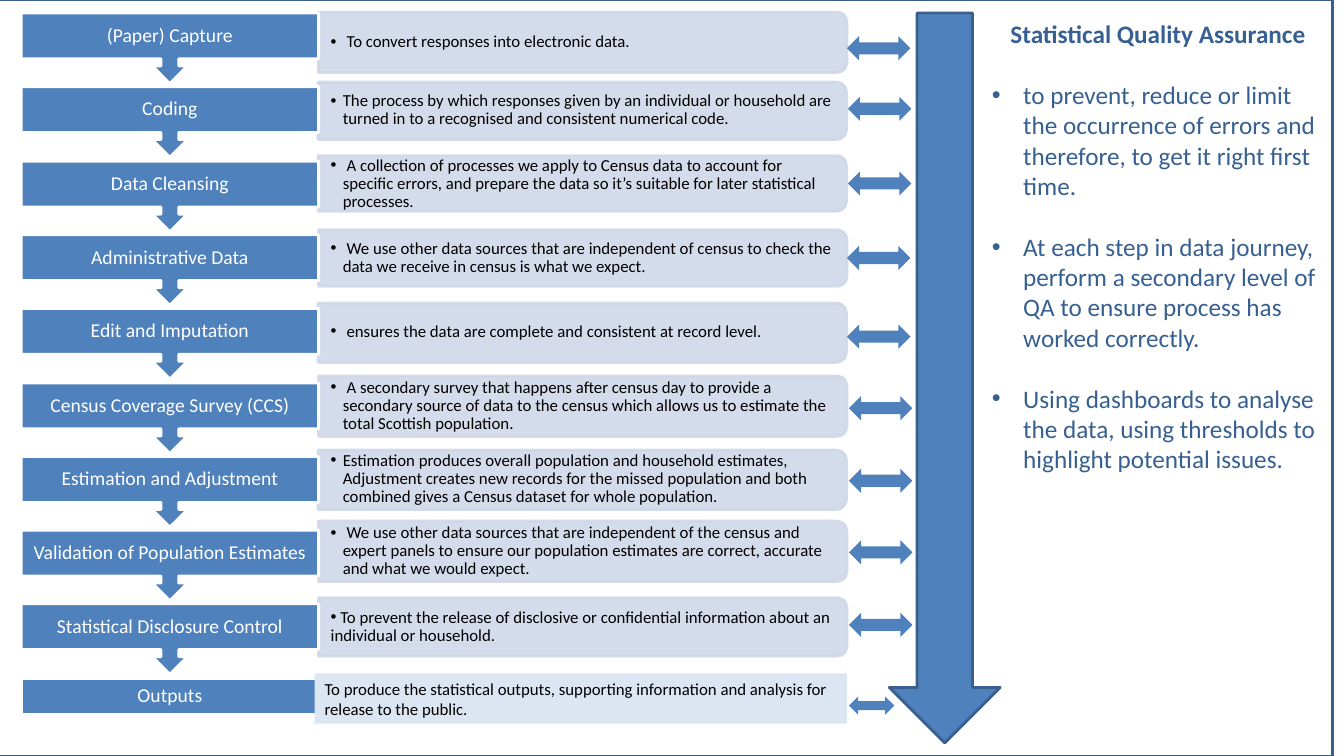
from dataclasses import dataclass

from lxml.etree import SubElement
from pptx import Presentation
from pptx.dml.color import RGBColor
from pptx.enum.shapes import MSO_SHAPE
from pptx.enum.text import MSO_ANCHOR, MSO_AUTO_SIZE, PP_ALIGN
from pptx.oxml.ns import qn
from pptx.util import Emu, Pt

EMU_PER_PX = 9144  # 100 px to the inch


@dataclass(frozen=True)
class Theme:
    font: str = "Calibri"
    blue: str = "4F81BD"
    edge: str = "3A5F8C"
    heading: str = "376092"
    panel: str = "D0D8E8"
    pale: str = "DCE6F2"
    white: str = "FFFFFF"
    black: str = "000000"
    heading_size: int = 18
    step_size: int = 14
    detail_size: int = 12
    line_width: int = 2


@dataclass(frozen=True)
class Box:
    left: int
    top: int
    width: int
    height: int


@dataclass(frozen=True)
class Step:
    name: str
    detail: str
    panel_top: int
    panel_height: int
    arrow_left: int
    arrow_top: int
    indent: int = 12


THEME = Theme()
STEP_LEFT, STEP_TOP, STEP_WIDTH, STEP_HEIGHT, STEP_PITCH = 21, 13, 295, 70, 73.3
PANEL_LEFT, PANEL_WIDTH = 316, 524

STEPS = [
    Step("(Paper) Capture", " To convert responses into electronic data.", 12, 60, 840, 36),
    Step("Coding", "The process by which responses given by an individual or household are "
         "turned in to a recognised and consistent numerical code.", 81, 57, 841, 96),
    Step("Data Cleansing", " A collection of processes we apply to Census data to account for "
         "specific errors, and prepare the data so it’s suitable for later statistical "
         "processes.", 155, 55, 841, 170),
    Step("Administrative Data", " We use other data sources that are independent of census to "
         "check the data we receive in census is what we expect.", 228, 56, 840, 244),
    Step("Edit and Imputation", " ensures the data are complete and consistent at record level.",
         300, 59, 840, 322),
    Step("Census Coverage Survey (CCS)", " A secondary survey that happens after census day to "
         "provide a secondary source of data to the census which allows us to estimate the "
         "total Scottish population.", 373, 60, 842, 393),
    Step("Estimation and Adjustment", "Estimation produces overall population and household "
         "estimates, Adjustment creates new records for the missed population and both "
         "combined gives a Census dataset for whole population.", 446, 59, 842, 465),
    Step("Validation of Population Estimates", " We use other data sources that are independent "
         "of the census and expert panels to ensure our population estimates are correct, "
         "accurate and what we would expect.", 517, 60, 842, 536),
    Step("Statistical Disclosure Control", " To prevent the release of disclosive or "
         "confidential information about an individual or household.", 593, 58, 842, 608, 0),
]

QUALITY_POINTS = [
    "to prevent, reduce or limit the occurrence of errors and therefore, to get it right first time.",
    "At each step in data journey, perform a secondary level of QA to ensure process has worked correctly.",
    "Using dashboards to analyse the data, using thresholds to highlight potential issues.",
]


def px(length: float) -> Emu:
    return Emu(round(length * EMU_PER_PX))


def place(box: Box) -> tuple:
    return px(box.left), px(box.top), px(box.width), px(box.height)


def add_shape(slide, kind, box: Box, fill: str = "", line: str = ""):
    shape = slide.shapes.add_shape(kind, *place(box))
    shape.shadow.inherit = False
    if fill:
        shape.fill.solid()
        shape.fill.fore_color.rgb = RGBColor.from_string(fill)
    else:
        shape.fill.background()
    if line:
        shape.line.color.rgb = RGBColor.from_string(line)
        shape.line.width = Pt(THEME.line_width)
    else:
        shape.line.fill.background()
    return shape


def set_frame(frame, anchor, horizontal: int = 10, vertical: int = 5) -> None:
    frame.word_wrap = True
    frame.auto_size = MSO_AUTO_SIZE.NONE
    frame.vertical_anchor = anchor
    frame.margin_left = frame.margin_right = px(horizontal)
    frame.margin_top = frame.margin_bottom = px(vertical)


def add_bullet(paragraph, indent: int) -> None:
    properties = paragraph._p.get_or_add_pPr()
    properties.set("marL", str(px(indent)))
    properties.set("indent", str(px(-indent)))
    SubElement(properties, qn("a:buFont")).set("typeface", "Arial")
    SubElement(properties, qn("a:buChar")).set("char", "•")


def write(paragraph, text: str, size: int, color: str, align=PP_ALIGN.LEFT,
          spacing: float = 1.0, bold: bool = False) -> None:
    paragraph.alignment = align
    paragraph.line_spacing = spacing
    run = paragraph.add_run()
    run.text = text
    run.font.name = THEME.font
    run.font.size = Pt(size)
    run.font.bold = bold
    run.font.color.rgb = RGBColor.from_string(color)


def add_step_box(slide, kind, row: int, height: int, name: str) -> None:
    box = Box(STEP_LEFT, round(STEP_TOP + row * STEP_PITCH), STEP_WIDTH, height)
    shape = add_shape(slide, kind, box, THEME.blue, THEME.white)
    set_frame(shape.text_frame, MSO_ANCHOR.MIDDLE, 6, 3)
    write(shape.text_frame.paragraphs[0], name, THEME.step_size, THEME.white,
          PP_ALIGN.CENTER, 0.9)


def add_panel(slide, step: Step) -> None:
    # The shape is turned a quarter so that its rounded corners face right
    middle = step.panel_top + step.panel_height / 2
    upright = Box(PANEL_LEFT + (PANEL_WIDTH - step.panel_height) // 2,
                  round(middle - PANEL_WIDTH / 2), step.panel_height, PANEL_WIDTH)
    panel = add_shape(slide, MSO_SHAPE.ROUND_2_SAME_RECTANGLE, upright, THEME.panel, THEME.panel)
    panel.rotation = 90
    for fill in (panel.fill, panel.line.fill):
        color = fill._xPr.find(".//" + qn("a:srgbClr"))
        SubElement(color, qn("a:alpha")).set("val", "90000")

    text_box = slide.shapes.add_textbox(
        *place(Box(PANEL_LEFT, step.panel_top, PANEL_WIDTH - 2, step.panel_height)))
    set_frame(text_box.text_frame, MSO_ANCHOR.MIDDLE, 12, 4)
    paragraph = text_box.text_frame.paragraphs[0]
    add_bullet(paragraph, step.indent)
    write(paragraph, step.detail, THEME.detail_size, THEME.black, spacing=0.9)


def add_link(slide, box: Box) -> None:
    add_shape(slide, MSO_SHAPE.LEFT_RIGHT_ARROW, box, THEME.blue)


def main() -> None:
    presentation = Presentation()
    presentation.slide_width, presentation.slide_height = px(1333), px(750)
    slide = presentation.slides.add_slide(presentation.slide_layouts[5])

    # Border
    add_shape(slide, MSO_SHAPE.RECTANGLE, Box(-11, 0, 1333, 750), line=THEME.edge)

    # Data journey
    for row, step in enumerate(STEPS):
        add_panel(slide, step)
        add_step_box(slide, MSO_SHAPE.DOWN_ARROW_CALLOUT, row, STEP_HEIGHT, step.name)
        add_link(slide, Box(step.arrow_left, step.arrow_top, 63, 24))

    # Outputs
    add_step_box(slide, MSO_SHAPE.RECTANGLE, len(STEPS), 36, "Outputs")
    outputs = add_shape(slide, MSO_SHAPE.RECTANGLE, Box(312, 668, 528, 50), THEME.pale)
    set_frame(outputs.text_frame, MSO_ANCHOR.TOP)
    write(outputs.text_frame.paragraphs[0],
          "To produce the statistical outputs, supporting information and analysis for "
          "release to the public.", THEME.detail_size, THEME.black)

    # Quality assurance arrow
    add_shape(slide, MSO_SHAPE.DOWN_ARROW, Box(882, 13, 110, 724), THEME.blue, THEME.edge)
    add_link(slide, Box(842, 691, 45, 18))

    # Quality assurance title and points
    title = slide.shapes.title
    title.left, title.top, title.width, title.height = place(Box(974, 13, 349, 40))
    set_frame(title.text_frame, MSO_ANCHOR.TOP)
    write(title.text_frame.paragraphs[0], "Statistical Quality Assurance",
          THEME.heading_size, THEME.heading, PP_ALIGN.CENTER, bold=True)

    points = slide.shapes.add_textbox(*place(Box(974, 74, 349, 403))).text_frame
    set_frame(points, MSO_ANCHOR.TOP)
    for index, point in enumerate(QUALITY_POINTS):
        paragraph = points.add_paragraph() if index else points.paragraphs[0]
        add_bullet(paragraph, 31)
        if index:
            paragraph.space_before = Pt(22)
        write(paragraph, point, THEME.heading_size, THEME.heading)

    presentation.save("out.pptx")


if __name__ == "__main__":
    main()
